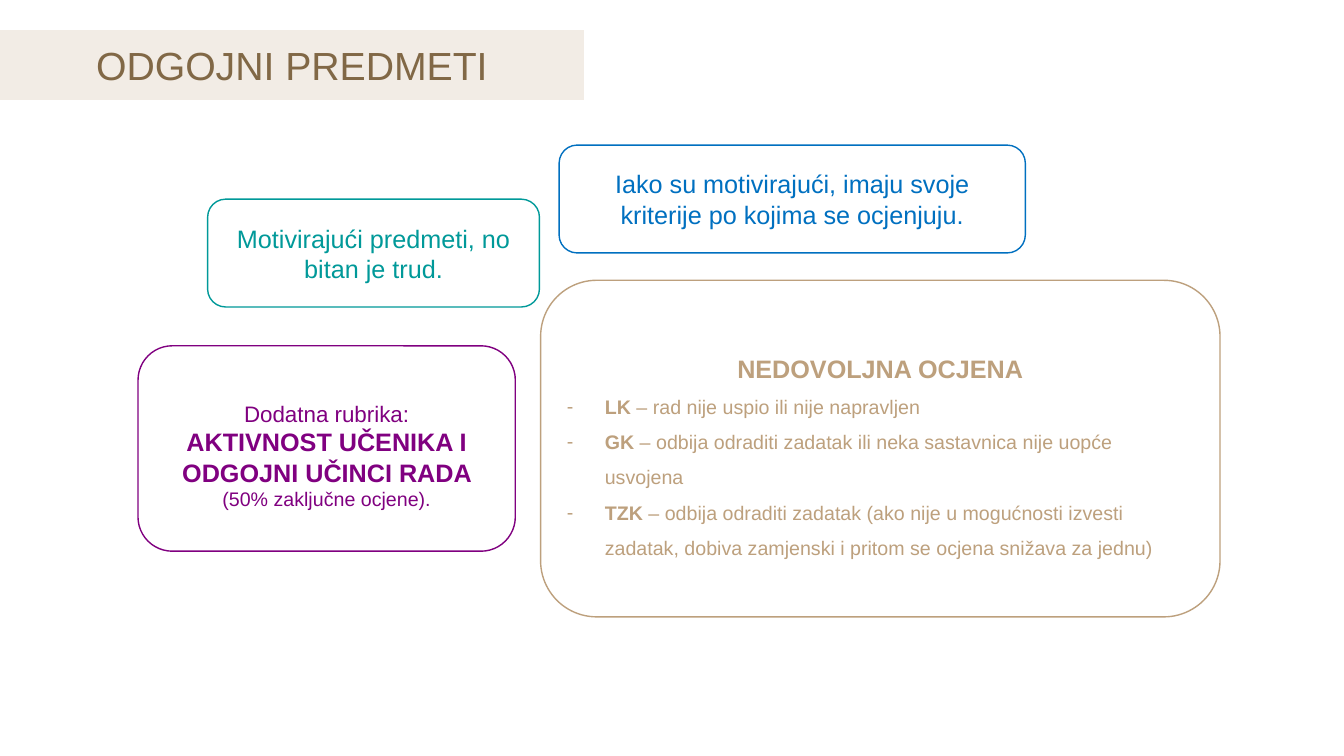
from lxml.etree import SubElement
from pptx import Presentation
from pptx.dml.color import RGBColor
from pptx.enum.shapes import MSO_SHAPE
from pptx.enum.text import MSO_ANCHOR, MSO_AUTO_SIZE, PP_ALIGN
from pptx.oxml.ns import qn
from pptx.util import Pt

TEAL, BLUE, PURPLE, SAND = "009999", "0070C0", "800080", "BDA07D"
BROWN, CREAM = "816846", "F2ECE5"


def color(hex_code):
    return RGBColor.from_string(hex_code)


class SlideBuilder:
    font = "Arial"
    outline = Pt(1)
    indent = Pt(27)

    def __init__(self, slide):
        self.slide = slide

    def format_run(self, run, size, hex_code, bold=False):
        run.font.name = self.font
        run.font.size = Pt(size)
        run.font.bold = bold
        run.font.color.rgb = color(hex_code)

    def title(self, text, left, top, width, height):
        heading = self.slide.shapes.title
        heading.left, heading.top = Pt(left), Pt(top)
        heading.width, heading.height = Pt(width), Pt(height)
        heading.fill.solid()
        heading.fill.fore_color.rgb = color(CREAM)
        frame = heading.text_frame
        frame.text = text
        frame.auto_size = MSO_AUTO_SIZE.NONE
        frame.vertical_anchor = MSO_ANCHOR.MIDDLE
        frame.paragraphs[0].alignment = PP_ALIGN.CENTER
        self.format_run(frame.paragraphs[0].runs[0], 28, BROWN)

    def card(self, hex_code, left, top, width, height):
        """Draw an outlined rounded box and return its text frame."""
        box = self.slide.shapes.add_shape(
            MSO_SHAPE.ROUNDED_RECTANGLE, Pt(left), Pt(top), Pt(width), Pt(height))
        box.shadow.inherit = False
        box.fill.background()
        box.line.color.rgb = color(hex_code)
        box.line.width = self.outline
        box.text_frame.word_wrap = True
        box.text_frame.vertical_anchor = MSO_ANCHOR.MIDDLE
        return box.text_frame

    def paragraph(self, frame, hex_code, pieces, spacing=1.0, dash=False):
        """Add a paragraph made of (text, size, bold) pieces."""
        first = frame.paragraphs[0]
        paragraph = frame.add_paragraph() if first.runs else first
        paragraph.alignment = PP_ALIGN.LEFT if dash else PP_ALIGN.CENTER
        paragraph.line_spacing = spacing
        for text, size, bold in pieces:
            run = paragraph.add_run()
            run.text = text
            self.format_run(run, size, hex_code, bold)
        if dash:
            properties = paragraph._p.get_or_add_pPr()
            properties.set("marL", str(self.indent))
            properties.set("indent", str(-self.indent))
            SubElement(properties, qn("a:buFont")).set("typeface", self.font)
            SubElement(properties, qn("a:buChar")).set("char", "-")


def main():
    deck = Presentation()
    deck.slide_width, deck.slide_height = Pt(960), Pt(540)
    builder = SlideBuilder(deck.slides.add_slide(deck.slide_layouts[5]))
    builder.title("ODGOJNI PREDMETI", 0, 21.6, 417, 49.7)

    motivation = builder.card(TEAL, 148.3, 142.3, 237, 77)
    builder.paragraph(motivation, TEAL, [
        ("Motivirajući predmeti, no bitan je trud.", 18, False)])

    criteria = builder.card(BLUE, 399.4, 103.7, 333, 77)
    builder.paragraph(criteria, BLUE, [
        ("Iako su motivirajući, imaju svoje kriterije po kojima se ocjenjuju.", 18, False)])

    activity = builder.card(PURPLE, 98.6, 247, 269.5, 146.7)
    builder.paragraph(activity, PURPLE, [("Dodatna rubrika:", 16, False)], spacing=1.5)
    builder.paragraph(activity, PURPLE, [
        ("AKTIVNOST UČENIKA I ODGOJNI UČINCI RADA ", 18, True),
        ("(50% zaključne ocjene).", 14, False)])

    failing_grade = builder.card(SAND, 386.2, 200.2, 485.3, 240.4)
    builder.paragraph(failing_grade, SAND, [("NEDOVOLJNA OCJENA", 18, True)], spacing=1.5)
    reasons = {
        "LK": "rad nije uspio ili nije napravljen",
        "GK": "odbija odraditi zadatak ili neka sastavnica nije uopće usvojena",
        "TZK": "odbija odraditi zadatak (ako nije u mogućnosti izvesti zadatak, "
               "dobiva zamjenski i pritom se ocjena snižava za jednu)",
    }
    for subject, reason in reasons.items():
        builder.paragraph(failing_grade, SAND, [
            (subject, 14, True), (f" – {reason}", 14, False)], spacing=1.5, dash=True)

    deck.save("out.pptx")


if __name__ == "__main__":
    main()
